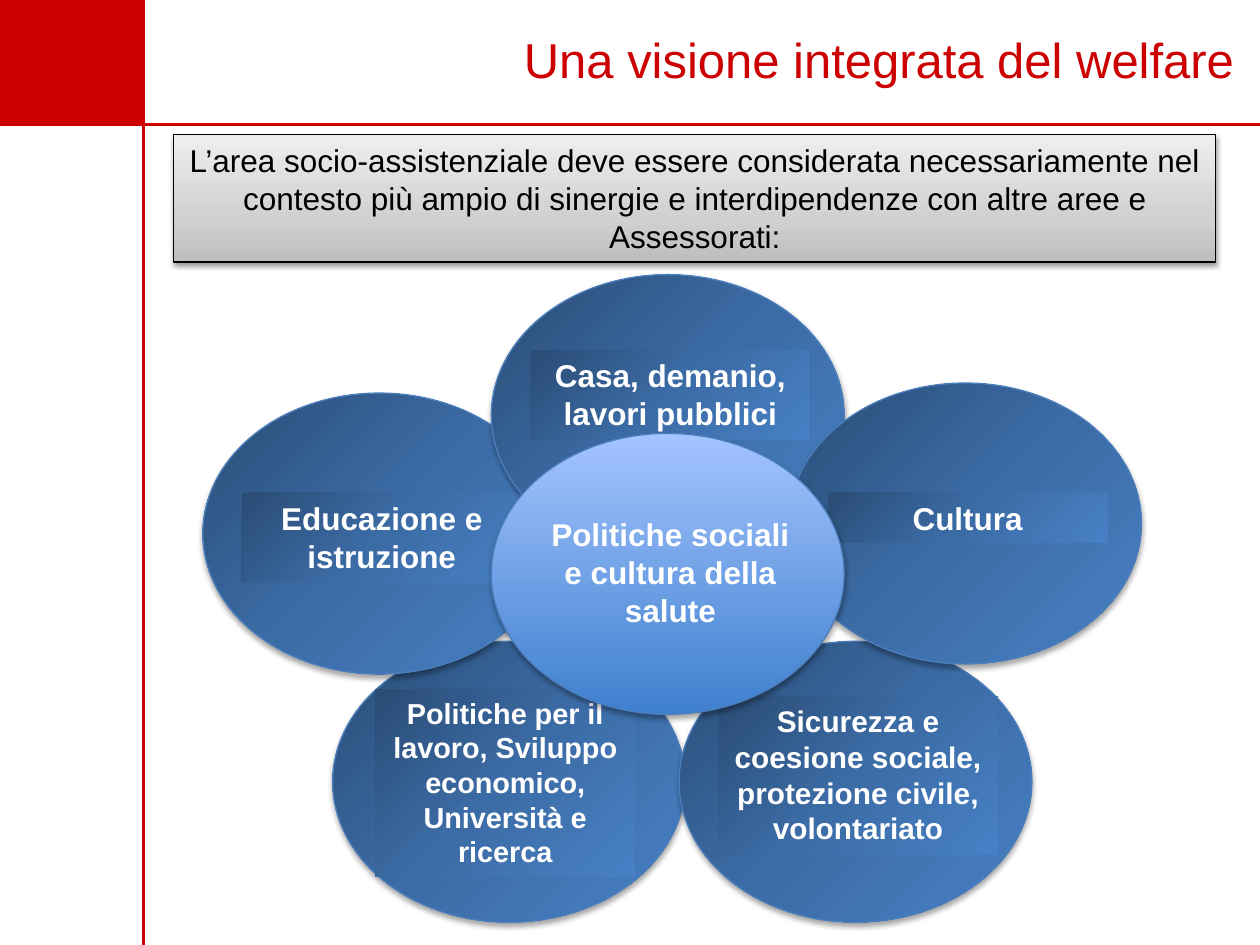
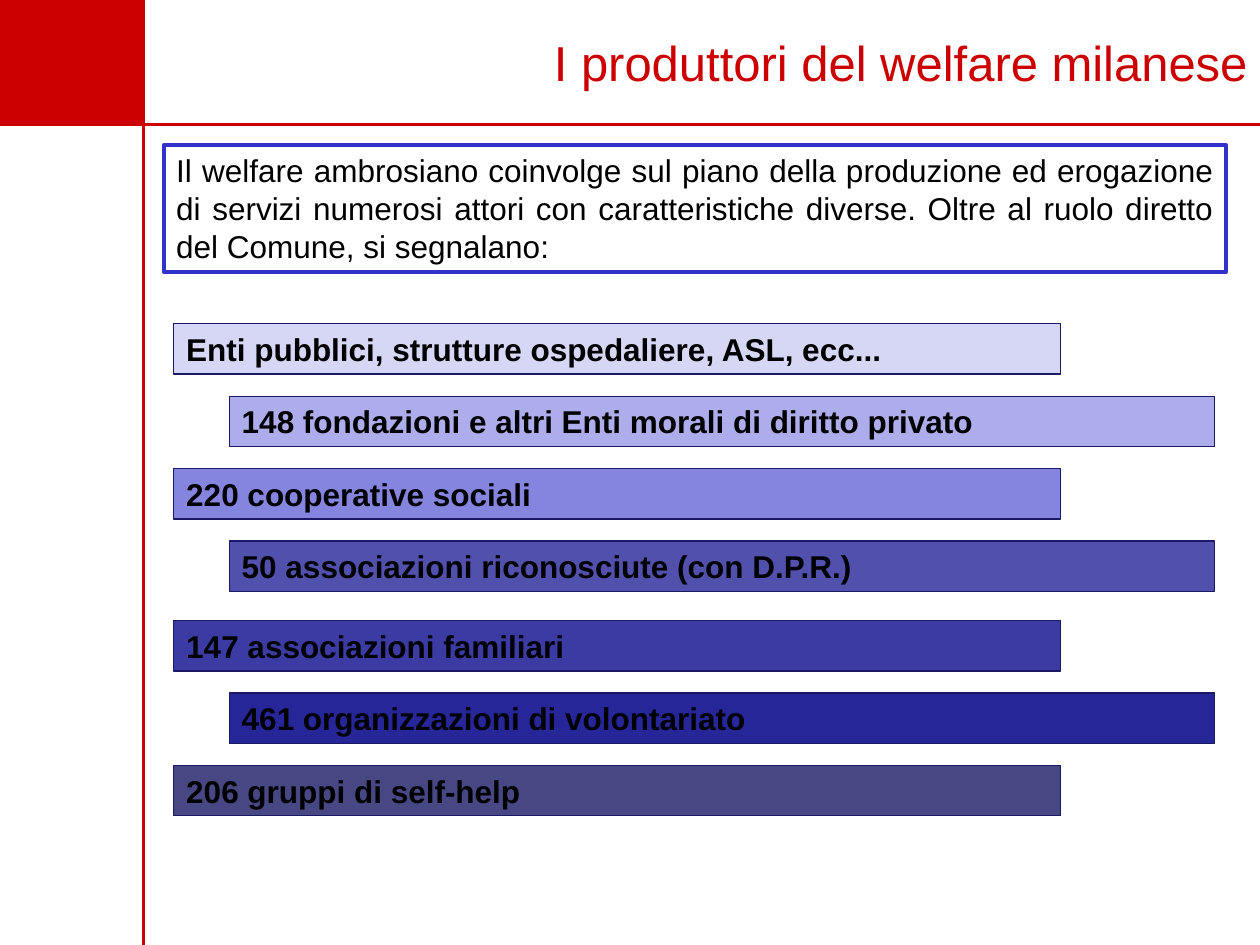
from dataclasses import dataclass

from lxml import etree
from pptx import Presentation, util as u
from pptx.dml.color import RGBColor
from pptx.enum import shapes as sh, text as tx
from pptx.oxml.ns import qn

COLS, ROWS = 100, 75  # grid over the whole slide
UNIT = u.Inches(0.1)  # side of one grid cell


@dataclass(frozen=True)
class Theme:
    red: str = "CC0000"
    white: str = "FFFFFF"
    black: str = "000000"
    frame_blue: str = "3333CC"
    bar_edge: str = "191966"
    petal_edge: str = "4B7EBC"
    banner: tuple = ((0, "BDBDBD"), (35, "D1D1D1"), (100, "EEEEEE"))
    petal: tuple = ((0, "2A4C75"), (50, "3C6CA6"), (100, "4780C5"))
    heart: tuple = ((0, "3F80CE"), (100, "A4C4FF"))
    font: str = "Arial"
    title_size: float = 28
    body_size: float = 18


T = Theme()
BAND_COLS, BAND_ROWS = 11.4, 9.9
PETAL_COLS, PETAL_ROWS = 28, 22.3
LABEL_INSET, LABEL_COLS = 3.1, 22.2
UPWARD, DIAGONAL = 90, 315  # gradient directions, counter-clockwise

# text, type size, petal column and row, label row and height, label inset and width
PETALS = [
    ("Politiche per il lavoro, Sviluppo economico, Università e ricerca",
     16.5, 26.4, 50.9, 54.7, 14.9, 3.4, 20.6),
    ("Sicurezza e coesione sociale, protezione civile, volontariato",
     17, 53.9, 50.9, 55.3, 12.5, LABEL_INSET, LABEL_COLS),
    ("Educazione e istruzione",
     T.body_size, 16.1, 31.2, 39.1, 7.1, LABEL_INSET, LABEL_COLS),
    ("Casa, demanio, lavori pubblici",
     T.body_size, 39, 21.8, 27.8, 7.1, LABEL_INSET, LABEL_COLS),
    ("Cultura",
     T.body_size, 62.6, 30.4, 39.1, 4, LABEL_INSET, LABEL_COLS),
]

# text, fill, opacity in percent
PRODUCERS = [
    ("Enti pubblici, strutture ospedaliere, ASL, ecc...", "D6D6F5", 100),
    ("148 fondazioni e altri Enti morali di diritto privato", "ADADEB", 100),
    ("220 cooperative sociali", "8585E0", 100),
    ("50 associazioni riconosciute (con D.P.R.)", "262699", 80),
    ("147 associazioni familiari", "262699", 90),
    ("461 organizzazioni di volontariato", "262699", 100),
    ("206 gruppi di self-help", "191966", 80),
]


def cells(*values):
    return [round(value * UNIT) for value in values]


def apply(target, **formats):
    for name, value in formats.items():
        setattr(target, name, value)


def child(parent, tag, **attributes):
    return etree.SubElement(parent, qn(tag), attributes)


def write(shape, words, size=T.body_size, color=T.black, bold=False,
          align=tx.PP_ALIGN.CENTER, anchor=tx.MSO_ANCHOR.TOP):
    frame = shape.text_frame
    apply(frame, text=words, word_wrap=True, auto_size=tx.MSO_AUTO_SIZE.NONE,
          vertical_anchor=anchor)
    paragraph = frame.paragraphs[0]
    paragraph.alignment = align
    run_font = paragraph.runs[0].font
    apply(run_font, name=T.font, size=u.Pt(size), bold=bold)
    run_font.color.rgb = RGBColor.from_string(color)


def paint(shape, fill, opacity=100, direction=UPWARD):
    """Fill with one colour, or with a gradient given as (percent, colour) stops."""
    if isinstance(fill, str):
        shape.fill.solid()
        shape.fill.fore_color.rgb = RGBColor.from_string(fill)
        if opacity < 100:
            color = shape.element.spPr.find(".//" + qn("a:srgbClr"))
            child(color, "a:alpha", val=str(opacity * 1000))
        return
    shape.fill.gradient()
    shape.fill.gradient_angle = direction
    stops = shape.element.spPr.find(".//" + qn("a:gsLst"))
    for old_stop in list(stops):
        stops.remove(old_stop)
    for percent, color in fill:
        stop = child(stops, "a:gs", pos=str(percent * 1000))
        child(stop, "a:srgbClr", val=color)


def outline(line, color, width):
    line.width = u.Pt(width)
    line.color.rgb = RGBColor.from_string(color)


def cast_shadow(shape, opacity, distance):
    effects = shape.element.spPr.find(qn("a:effectLst"))
    shadow = child(effects, "a:outerShdw", blurRad=str(u.Pt(3.1)),
                   dist=str(u.Pt(distance)), dir="5400000", rotWithShape="0")
    child(child(shadow, "a:srgbClr", val=T.black), "a:alpha", val=str(opacity * 1000))


def add_block(host, box, fill, edge=None, width=0.75,
              kind=sh.MSO_SHAPE.RECTANGLE, **paint_options):
    block = host.shapes.add_shape(kind, *cells(*box))
    block.shadow.inherit = False
    paint(block, fill, **paint_options)
    if edge:
        outline(block.line, edge, width)
    else:
        block.line.fill.background()
    return block


def add_rule(slide, *ends):
    rule = slide.shapes.add_connector(sh.MSO_CONNECTOR.STRAIGHT, *cells(*ends))
    outline(rule.line, T.red, 1.5)
    child(rule.element.spPr, "a:effectLst")
    return rule


def add_oval(group, col, row, fill, **paint_options):
    oval = add_block(group, (col, row, PETAL_COLS, PETAL_ROWS), fill, T.petal_edge,
                     kind=sh.MSO_SHAPE.OVAL, **paint_options)
    cast_shadow(oval, 35, 1.8)


def add_petal(slide, words, size, col, row, label_row, label_rows, inset, label_cols):
    group = slide.shapes.add_group_shape()
    add_oval(group, col, row, T.petal, direction=DIAGONAL)
    label = add_block(group, (col + inset, label_row, label_cols, label_rows),
                      T.petal, direction=DIAGONAL)
    write(label, words, size, T.white, bold=True)


def add_heart(slide, words, col, row):
    """Central oval that covers the inner ends of the petals."""
    group = slide.shapes.add_group_shape()
    add_oval(group, col, row, T.heart)
    label = group.shapes.add_textbox(*cells(col + LABEL_INSET, row + 6, LABEL_COLS, 10.1))
    write(label, words, color=T.white, bold=True)


def add_producer_bars(slide):
    for index, (words, fill, opacity) in enumerate(PRODUCERS):
        col, cols = ((13.8, 70.4), (18.2, 78.2))[index % 2]
        row = 25.7 + 5.75 * index + (0.55 if index >= 4 else 0)
        bar = add_block(slide, (col, row, cols, 4), fill, T.bar_edge, opacity=opacity)
        write(bar, words, bold=True, align=tx.PP_ALIGN.LEFT)


def add_frame_to_layout(layout, slide):
    """Build the shared corner and rules on a slide, then move them to its layout."""
    corner = add_block(slide, (0, 0, BAND_COLS, BAND_ROWS), T.red)
    across = add_rule(slide, 0, BAND_ROWS, COLS, BAND_ROWS)
    down = add_rule(slide, BAND_COLS, ROWS, BAND_COLS, 0)
    for part in (corner, across, down):
        layout.shapes.element.append(part.element)


def set_title(slide, words, row=0):
    title = slide.shapes.title
    left, top, width, height = cells(BAND_COLS, row, COLS - BAND_COLS, BAND_ROWS)
    apply(title, left=left, top=top, width=width, height=height)
    write(title, words, T.title_size, T.red, align=tx.PP_ALIGN.RIGHT,
          anchor=tx.MSO_ANCHOR.MIDDLE)


def build_vision(slide):
    set_title(slide, "Una visione integrata del welfare ", row=-0.3)
    banner = add_block(slide, (13.8, 10.7, 82.7, 10.1), T.banner, T.black)
    cast_shadow(banner, 38, 1.6)
    write(banner, "L’area socio-assistenziale deve essere considerata necessariamente "
                  "nel contesto più ampio di sinergie e interdipendenze con altre aree "
                  "e Assessorati:")
    for petal in PETALS:
        add_petal(slide, *petal)
    add_heart(slide, "Politiche sociali e cultura della salute", 39, 34.4)


def build_producers(slide):
    set_title(slide, "I produttori del welfare milanese")
    intro = add_block(slide, (13, 11.5, 84.3, 10.1), T.white, T.frame_blue, width=2)
    write(intro, "Il welfare ambrosiano coinvolge sul piano della produzione ed "
                 "erogazione di servizi numerosi attori con caratteristiche diverse. "
                 "Oltre al ruolo diretto del Comune, si segnalano:",
          align=tx.PP_ALIGN.JUSTIFY)
    add_producer_bars(slide)


def main():
    deck = Presentation()
    apply(deck, slide_width=COLS * UNIT, slide_height=ROWS * UNIT)
    layout = deck.slide_layouts.get_by_name("Title Only")
    vision, producers = (deck.slides.add_slide(layout) for _ in range(2))
    add_frame_to_layout(layout, vision)
    build_vision(vision)
    build_producers(producers)
    deck.save("out.pptx")


if __name__ == "__main__":
    main()
